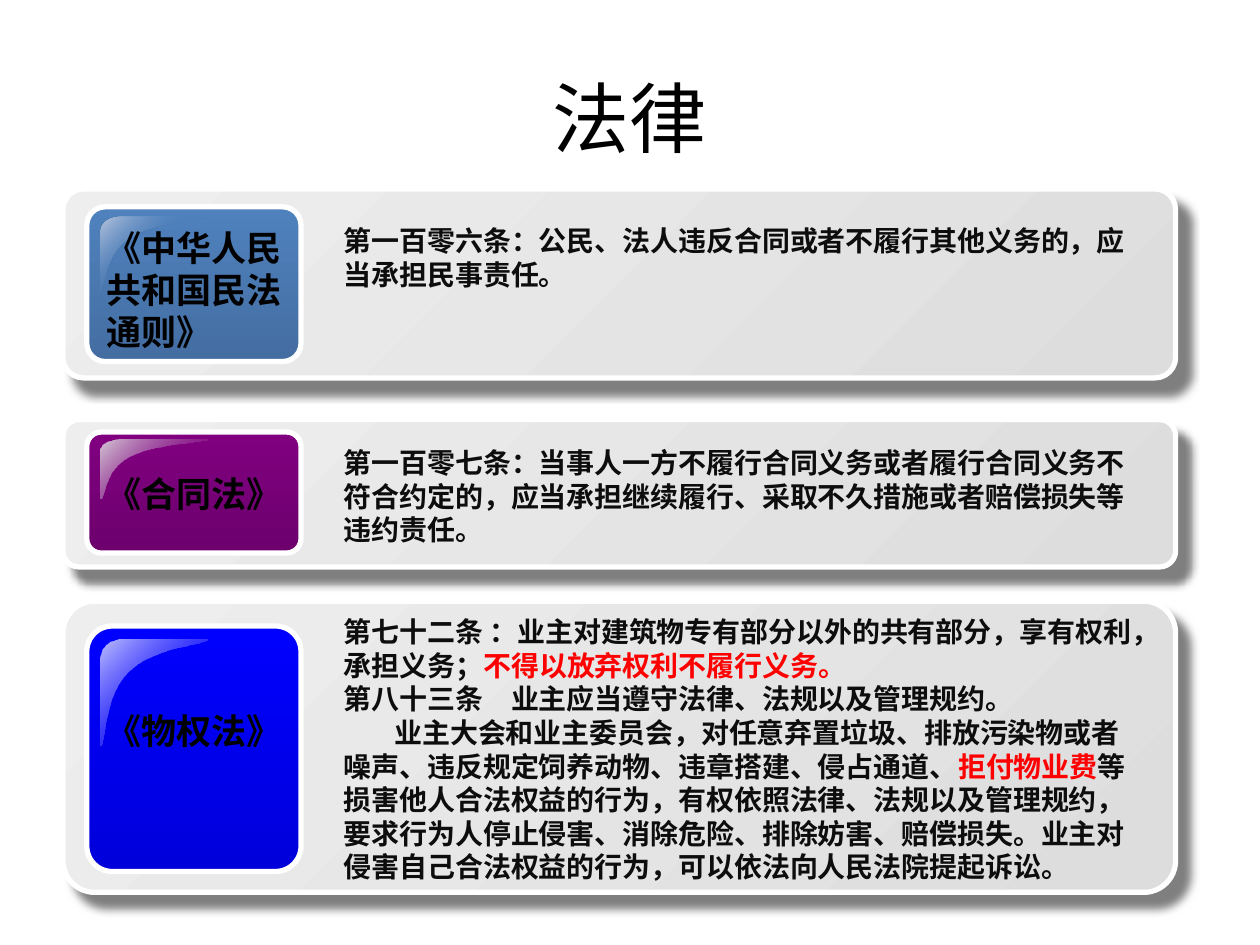
from lxml.etree import SubElement
from pptx import Presentation
from pptx.dml.color import RGBColor
from pptx.enum.shapes import MSO_SHAPE as Shape
from pptx.enum.text import MSO_ANCHOR as Anchor, MSO_AUTO_SIZE as AutoSize, PP_ALIGN as Align
from pptx.oxml.ns import qn
from pptx.util import Cm, Pt

FONT = "Times New Roman"
COLORS = {"black": "000000", "text": "0D0D0D", "red": "FF0000", "white": "FFFFFF",
          "panel_start": "EEEEEE", "panel_end": "DDDDDD"}

# Content: each law has a name and article paragraphs made of (text, colour) runs.
# Vertical places are (top, height) in cm.
TITLE = "法律"
LAWS = [
    {
        "name": "《中华人民共和国民法通则》", "wrap_name": True,
        "articles": [[("第一百零六条：公民、法人违反合同或者不履行其他义务的，应当承担民事责任。", "text")]],
        "panel": (3.81, 3.81), "tile": (4.17, 3.12), "gloss": (4.37, 1.55),
        "label": (4.45, 2.69), "body": (4.39, 1.63),
        "tile_colors": ("4F81BD", "446EA2"),
        "gloss_stops": [(0, "BBC7DE", 100), (50, "4F81BD", 0), (100, "BBC7DE", 100)],
    },
    {
        "name": "《合同法》", "wrap_name": False,
        "articles": [[("第一百零七条：当事人一方不履行合同义务或者履行合同义务不符合约定的，"
                       "应当承担继续履行、采取不久措施或者赔偿损失等违约责任。", "text")]],
        "panel": (8.46, 2.97), "tile": (8.71, 2.44), "gloss": (8.86, 1.22),
        "label": (9.4, 0.84), "body": (8.86, 2.31),
        "tile_colors": ("800080", "6D006D"),
        "gloss_stops": [(0, "D5C9D5", 100), (100, "800080", 0)],
    },
    {
        "name": "《物权法》", "wrap_name": False,
        "articles": [
            [("第七十二条 ：业主对建筑物专有部分以外的共有部分，享有权利，承担义务；", "text"),
             ("不得以放弃权利不履行义务。", "red")],
            [("第八十三条　业主应当遵守法律、法规以及管理规约。", "text")],
            [("业主大会和业主委员会，对任意弃置垃圾、排放污染物或者噪声、违反规定饲养动物、"
              "违章搭建、侵占通道、", "text"),
             ("拒付物业费", "red"),
             ("等损害他人合法权益的行为，有权依照法律、法规以及管理规约，要求行为人停止侵害、"
              "消除危险、排除妨害、赔偿损失。业主对侵害自己合法权益的行为，"
              "可以依法向人民法院提起诉讼。", "text")],
        ],
        "indented": 2,
        "panel": (12.12, 5.87), "tile": (12.62, 4.95), "gloss": (12.9, 2.18),
        "label": (14.17, 1.5), "body": (12.27, 5.74),
        "tile_colors": ("0000FF", "0000DA"),
        "gloss_stops": [(0, "BFBFFF", 100), (100, "0000FF", 0)],
    },
]

# Columns shared by all laws: (left, width) in cm
COLUMNS = {"panel": (1.27, 22.43), "tile": (1.75, 4.32), "gloss": (2.03, 2.15),
           "label": (1.9, 4.45), "body": (6.68, 16.48)}
SHORT_LABEL_WIDTH = 4.08

# Gloss outline in fractions of its box: cubic curves as four control points
GLOSS_CURVES = [
    [(0.2, 0), (0.08, 0), (0, 0.08), (0, 0.2)],
    [(0, 0.98), (0.05, 1), (0.02, 0.51), (0.27, 0.29)],
    [(0.27, 0.29), (0.52, 0.06), (1, 0.05), (1, 0)],
]


def frame(law, part):
    left, width = COLUMNS[part]
    top, height = law[part]
    return Cm(left), Cm(top), Cm(width), Cm(height)


def set_gradient(shape, stops, angle):
    """Fill with (position, colour, opacity) stops, the angle clockwise."""
    shape.fill.gradient()
    shape.fill.gradient_angle = -angle % 360
    stop_list = shape._element.spPr.find(qn("a:gradFill")).find(qn("a:gsLst"))
    for stop in list(stop_list):
        stop_list.remove(stop)
    for position, color, opacity in stops:
        stop = SubElement(stop_list, qn("a:gs"), pos=str(position * 1000))
        rgb = SubElement(stop, qn("a:srgbClr"), val=color)
        if opacity < 100:
            SubElement(rgb, qn("a:alpha"), val=str(opacity * 1000))


def add_shadow(shape):
    effects = shape._element.spPr.find(qn("a:effectLst"))
    shadow = SubElement(effects, qn("a:outerShdw"), blurRad=str(Pt(5)), dist=str(Pt(10.6)),
                        dir=str(49 * 60000), algn="ctr", rotWithShape="0")
    rgb = SubElement(shadow, qn("a:srgbClr"), val=COLORS["black"])
    SubElement(rgb, qn("a:alpha"), val="50000")


def add_card(shapes, law, part, radius, colors, angle):
    card = shapes.add_shape(Shape.ROUNDED_RECTANGLE, *frame(law, part))
    card.adjustments[0] = radius
    set_gradient(card, [(0, colors[0], 100), (100, colors[1], 100)], angle)
    card.line.color.rgb = RGBColor.from_string(COLORS["white"])
    card.line.width = Pt(3)
    card.shadow.inherit = False
    return card


def curve_points(curve, steps=12):
    for step in range(steps + 1):
        t = step / steps
        weights = ((1 - t) ** 3, 3 * t * (1 - t) ** 2, 3 * t * t * (1 - t), t ** 3)
        yield tuple(sum(w * point[axis] for w, point in zip(weights, curve)) for axis in (0, 1))


def add_gloss(shapes, law):
    left, top, width, height = frame(law, "gloss")
    points = [(round(left + x * width), round(top + y * height))
              for curve in GLOSS_CURVES for x, y in curve_points(curve)]
    builder = shapes.build_freeform(*points[0])
    builder.add_line_segments(points[1:], close=True)
    gloss = builder.convert_to_shape()
    set_gradient(gloss, law["gloss_stops"], 45)
    gloss.line.fill.background()
    gloss.shadow.inherit = False


def add_run(para, text, size, color, bold=True):
    span = para.add_run()
    span.text = text
    span.font.name = FONT
    span.font.size = Pt(size)
    span.font.bold = bold
    span.font.color.rgb = RGBColor.from_string(COLORS[color])


def add_text(shapes, place, paragraphs, size, wrap=True, indented=None):
    box = shapes.add_textbox(*place)
    text = box.text_frame
    text.word_wrap = wrap
    text.auto_size = AutoSize.SHAPE_TO_FIT_TEXT
    for number, runs in enumerate(paragraphs):
        para = text.add_paragraph() if number else text.paragraphs[0]
        if number == indented:
            para._p.get_or_add_pPr().set("indent", str(Cm(1.02)))
        for content, color in runs:
            add_run(para, content, size, color)


deck = Presentation()
deck.slide_width, deck.slide_height = Cm(25.4), Cm(19.05)
page = deck.slides.add_slide(deck.slide_layouts[5])

# Title
title = page.shapes.title
title.left, title.top, title.width, title.height = Cm(1.27), Cm(0.76), Cm(22.86), Cm(3.18)
title.text_frame.vertical_anchor = Anchor.MIDDLE
title_para = title.text_frame.paragraphs[0]
title_para.alignment = Align.CENTER
add_run(title_para, TITLE, 44, "black", bold=False)

# One group per law: panel, glossy tile, name and articles
for law in LAWS:
    shapes = page.shapes.add_group_shape().shapes
    panel = add_card(shapes, law, "panel", 0.109,
                     (COLORS["panel_start"], COLORS["panel_end"]), 45)
    add_shadow(panel)
    add_card(shapes, law, "tile", 0.119, law["tile_colors"], 90)
    add_gloss(shapes, law)
    left, top, width, height = frame(law, "label")
    if not law["wrap_name"]:
        width = Cm(SHORT_LABEL_WIDTH)
    add_text(shapes, (left, top, width, height), [[(law["name"], "black")]], 20, law["wrap_name"])
    add_text(shapes, frame(law, "body"), law["articles"], 16, indented=law.get("indented"))

deck.save("out.pptx")
